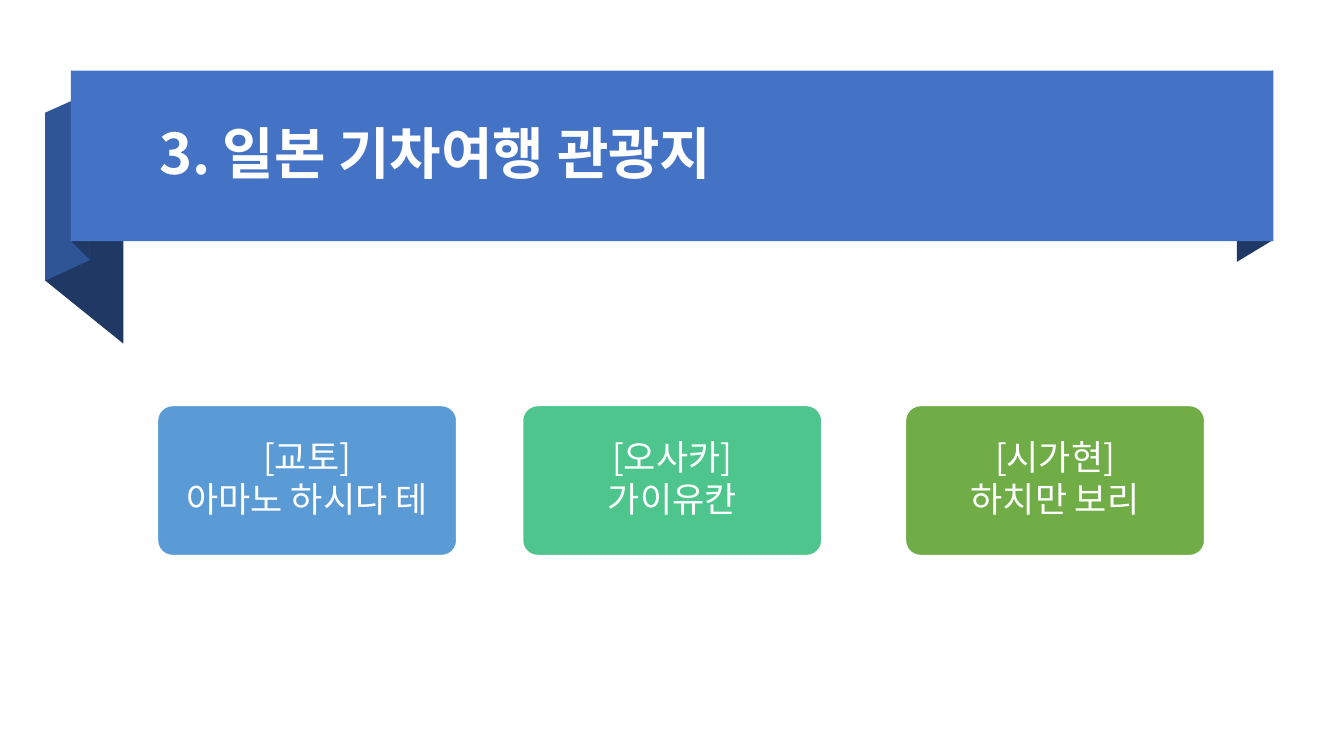
from dataclasses import dataclass

from lxml.etree import SubElement
from pptx import Presentation
from pptx.dml.color import RGBColor
from pptx.enum.shapes import MSO_SHAPE as Kind
from pptx.enum.text import MSO_ANCHOR as Anchor, PP_ALIGN as Align
from pptx.oxml.ns import qn
from pptx.util import Cm, Pt


@dataclass(frozen=True)
class Theme:
    face: str = "Noto Sans CJK KR"
    white: str = "FFFFFF"
    blue: str = "4472C4"
    mid: str = "2F5597"
    dark: str = "203864"
    cards: tuple = ("5B9BD5", "4DC58D", "70AD47")
    head: int = 40
    body: int = 25


class Deck:
    def __init__(self, theme):
        self.theme = theme
        self.file = Presentation()
        self.file.slide_width, self.file.slide_height = Cm(33.87), Cm(19.05)
        self.slide = self.file.slides.add_slide(self.file.slide_layouts[6])
        self.shapes = self.slide.shapes

    def paint(self, shape, fill, line=None):
        shape.shadow.inherit = False
        shape.fill.solid()
        shape.fill.fore_color.rgb = RGBColor.from_string(fill)
        if line:
            shape.line.color.rgb = RGBColor.from_string(line)
            shape.line.width = Pt(1)
        else:
            shape.line.fill.background()

    def fold(self, fill, points):
        """Draw a closed outline through points given in centimetres."""
        first, *rest = [(Cm(x), Cm(y)) for x, y in points]
        pen = self.shapes.build_freeform(*first)
        pen.add_line_segments(rest)
        self.paint(pen.convert_to_shape(), fill)

    def block(self, kind, box, fill, line=None):
        shape = self.shapes.add_shape(kind, *map(Cm, box))
        self.paint(shape, fill, line)
        return shape

    def label(self, shape, lines, size, align, bold=False, after=0):
        frame = shape.text_frame
        frame.word_wrap = True
        frame.vertical_anchor = Anchor.MIDDLE
        frame.text = "\n".join(lines)
        for para in frame.paragraphs:
            para.alignment = align
            para.line_spacing = 0.9
            para.space_after = Pt(after)
            font = para.font
            font.size, font.bold = Pt(size), bold
            font.color.rgb = RGBColor.from_string(self.theme.white)
            font.name = self.theme.face
            # Hangul takes its face from the East Asian slot
            props = para._p.pPr.find(qn("a:defRPr"))
            SubElement(props, qn("a:ea"), typeface=self.theme.face)

    def title(self, box, text):
        shape = self.shapes.add_textbox(*map(Cm, box))
        self.label(shape, [text], self.theme.head, Align.LEFT, bold=True)

    def card(self, box, fill, lines):
        shape = self.block(Kind.ROUNDED_RECTANGLE, box, fill, self.theme.white)
        shape.adjustments[0] = 0.1
        frame = shape.text_frame
        frame.margin_left = frame.margin_right = Cm(0.24)
        frame.margin_top = frame.margin_bottom = Cm(0.2)
        self.label(shape, lines, self.theme.body, Align.CENTER, after=3)


def main():
    theme = Theme()
    deck = Deck(theme)

    folds = (
        (theme.dark, [(32.08, 6.05), (31.17, 6.6), (31.17, 2.31), (32.08, 1.78)]),
        (theme.dark, [(3.11, 8.66), (1.14, 7.07), (1.14, 2.84), (3.11, 4.45)]),
        (theme.mid, [(2.26, 6.56), (1.14, 7.07), (1.14, 2.84), (2.26, 2.34)]),
        (theme.dark, [(2.26, 6.54), (1.8, 6.08), (1.8, 1.78), (2.26, 2.26)]),
    )
    for fill, points in folds:
        deck.fold(fill, points)
    deck.block(Kind.RECTANGLE, (1.79, 1.78, 30.3, 4.3), theme.blue)
    deck.title((3.76, 2.11, 27.79, 3.68), "3. 일본 기차여행 관광지")

    spots = (
        (3.97, "[교토]", "아마노 하시다 테"),
        (13.17, "[오사카]", "가이유칸"),
        (22.82, "[시가현]", "하치만 보리"),
    )
    for fill, (left, *lines) in zip(theme.cards, spots):
        deck.card((left, 10.22, 7.54, 3.78), fill, lines)

    deck.file.save("out.pptx")


if __name__ == "__main__":
    main()
